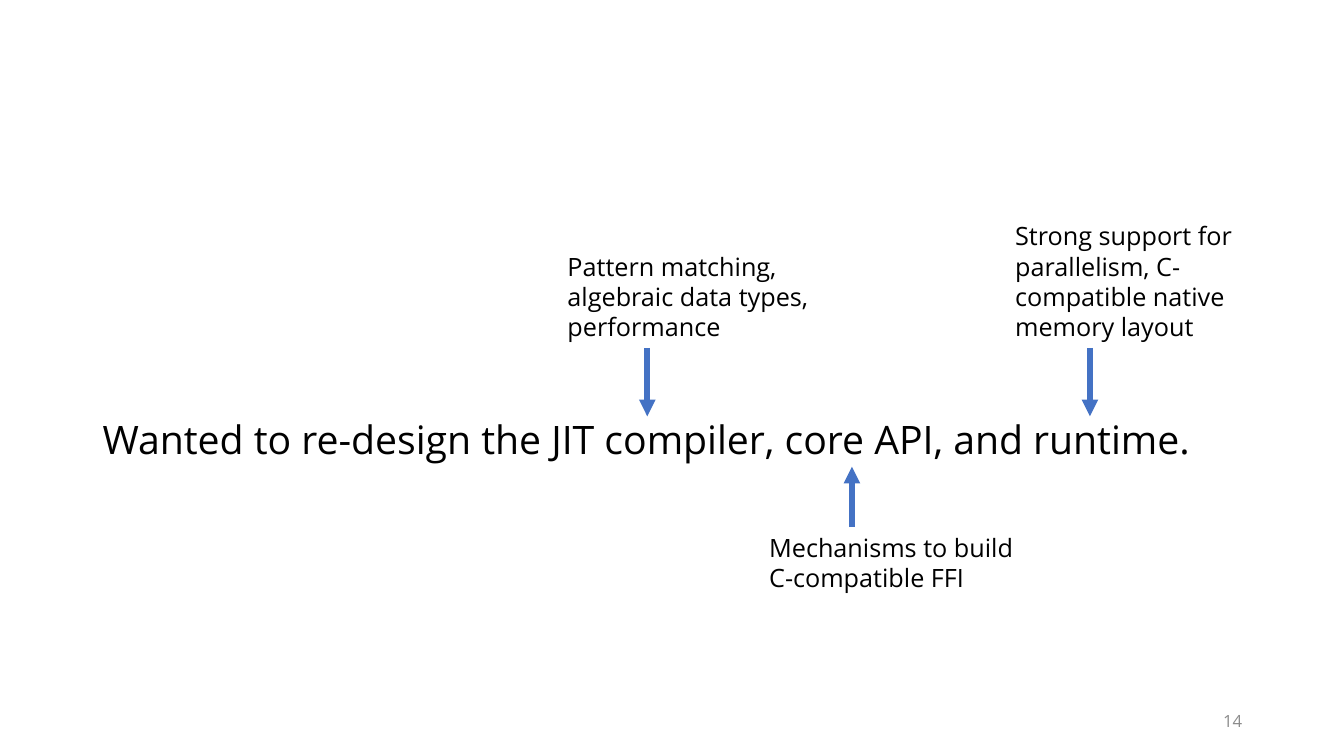
from lxml.etree import SubElement
from pptx import Presentation
from pptx.dml.color import RGBColor
from pptx.enum.shapes import MSO_CONNECTOR
from pptx.enum.text import MSO_ANCHOR, PP_ALIGN
from pptx.oxml.ns import qn
from pptx.util import Inches, Pt

THEME = {
    "font": "Open Sans",
    "ink": "000000", "grey": "8C8C8C", "blue": "4472C4",
    "claim": 28, "note": 18, "number": 12, "line": 4,
}

CLAIM = "Wanted to re-design the JIT compiler, core API, and runtime."
PAGE = "14"

# text, left, top, height, arrow x
ABOVE = [
    ("Pattern matching, algebraic data types, performance",
     5.53, 2.44, 1.01, 6.42),
    ("Strong support for parallelism, C-compatible native memory layout",
     9.97, 2.14, 1.31, 10.81),
]
BELOW = [
    ("Mechanisms to build C-compatible FFI", 7.53, 5.23, 0.71, 8.45),
]
NOTE_WIDTH = 2.78
CLAIM_TOP, CLAIM_BASE = 4.13, 4.63


def add_text(slide, text, box, size="note", color="ink",
             anchor=MSO_ANCHOR.TOP, align=PP_ALIGN.LEFT, before=0, lead=1.0):
    shape = slide.shapes.add_textbox(*map(Inches, box))
    frame = shape.text_frame
    frame.word_wrap = True
    frame.vertical_anchor = anchor
    para = frame.paragraphs[0]
    para.alignment = align
    para.space_before = Pt(before)
    para.line_spacing = lead
    run = para.add_run()
    run.text = text
    run.font.name = THEME["font"]
    run.font.size = Pt(THEME[size])
    run.font.color.rgb = RGBColor.from_string(THEME[color])


def add_arrow(slide, x, start, end):
    """Draw a vertical arrow with its head at end."""
    arrow = slide.shapes.add_connector(
        MSO_CONNECTOR.STRAIGHT, *map(Inches, (x, start, x, end)))
    arrow.line.color.rgb = RGBColor.from_string(THEME["blue"])
    arrow.line.width = Pt(THEME["line"])
    props = arrow.element.spPr
    SubElement(props.find(qn("a:ln")), qn("a:tailEnd"), type="triangle")
    SubElement(props, qn("a:effectLst"))


def main():
    deck = Presentation()
    deck.slide_width, deck.slide_height = Inches(13.33), Inches(7.5)
    slide = deck.slides.add_slide(deck.slide_layouts[6])

    add_text(slide, CLAIM, (0.92, 2, 11.5, 4.76), size="claim",
             anchor=MSO_ANCHOR.MIDDLE, before=10, lead=0.9)
    for text, left, top, height, x in ABOVE:
        add_arrow(slide, x, top + height, CLAIM_TOP)
        add_text(slide, text, (left, top, NOTE_WIDTH, height))
    for text, left, top, height, x in BELOW:
        add_arrow(slide, x, top, CLAIM_BASE)
        add_text(slide, text, (left, top, NOTE_WIDTH, height))
    add_text(slide, PAGE, (9.42, 6.95, 3, 0.4), size="number", color="grey",
             anchor=MSO_ANCHOR.MIDDLE, align=PP_ALIGN.RIGHT)

    deck.save("out.pptx")


if __name__ == "__main__":
    main()
